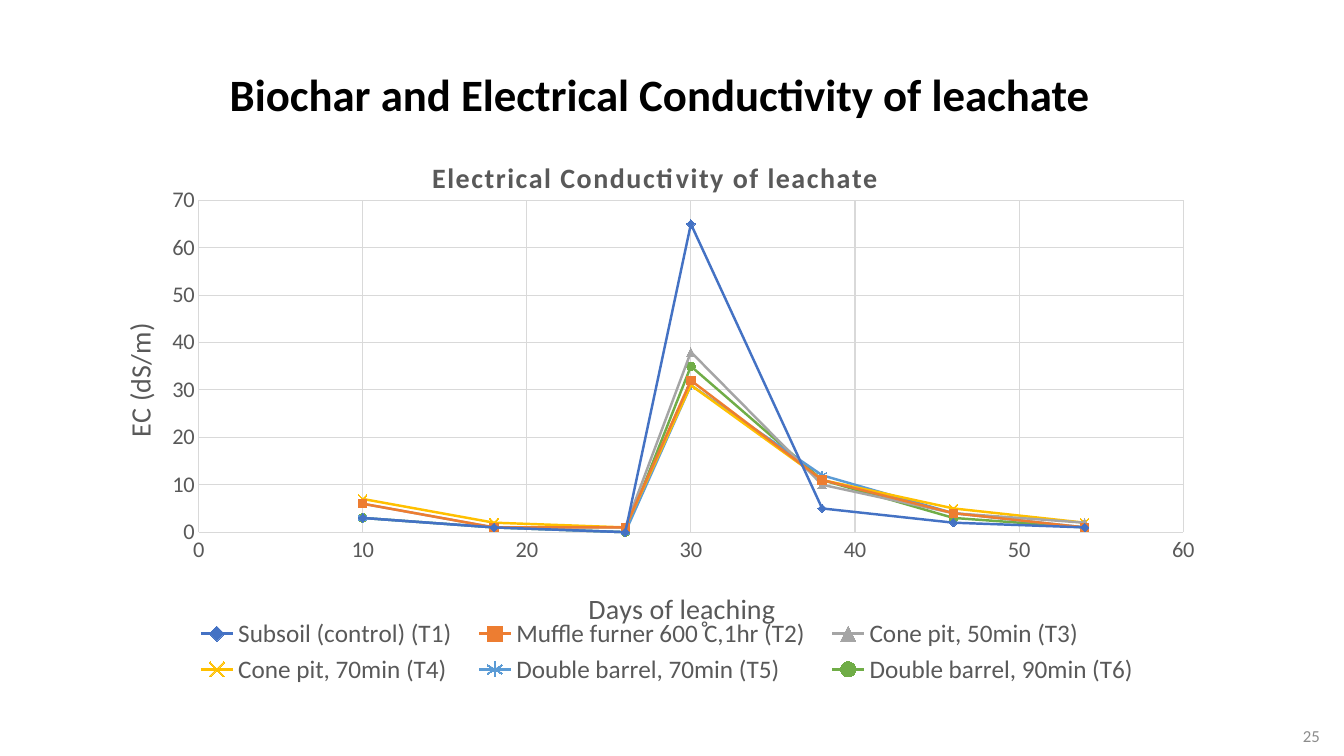
from dataclasses import dataclass

from lxml import etree
from pptx import Presentation
from pptx.chart.data import XyChartData
from pptx.dml.color import RGBColor
from pptx.enum.chart import XL_CHART_TYPE, XL_LEGEND_POSITION, XL_MARKER_STYLE, XL_TICK_MARK
from pptx.enum.text import MSO_ANCHOR, PP_ALIGN
from pptx.oxml.ns import qn
from pptx.util import Inches, Pt

LINES = XL_CHART_TYPE.XY_SCATTER_LINES
TOP = XL_LEGEND_POSITION.TOP
MARK = XL_MARKER_STYLE
NO_TICK = XL_TICK_MARK.NONE
MIDDLE = MSO_ANCHOR.MIDDLE
LEFT, RIGHT = PP_ALIGN.LEFT, PP_ALIGN.RIGHT
FACE = "Calibri"
COLORS = {
    "black": "000000", "page": "8C8C8C", "text": "595959", "grid": "D9D9D9",
    "blue": "4472C4", "orange": "ED7D31", "gray": "A5A5A5",
    "gold": "FFC000", "sky": "5B9BD5", "green": "70AD47",
}
DAYS = (10, 18, 26, 30, 38, 46, 54)


@dataclass
class Series:
    name: str
    vals: tuple
    color: str
    mark: int
    solid: bool = True


@dataclass
class Label:
    text: str
    box: tuple
    size: int
    color: str
    align: int
    bold: bool = False
    space: float = 1.0
    foot: float = 0.05


SERIES = [
    Series("Subsoil (control) (T1)", (3, 1, 0, 65, 5, 2, 1), "blue", MARK.DIAMOND),
    Series("Muffle furner 600 ̊C,1hr (T2)", (6, 1, 1, 32, 11, 4, 1), "orange", MARK.SQUARE),
    Series("Cone pit, 50min (T3)", (6, 1, 1, 38, 10, 4, 2), "gray", MARK.TRIANGLE),
    Series("Cone pit, 70min (T4)", (7, 2, 1, 31, 11, 5, 2), "gold", MARK.X, False),
    Series("Double barrel, 70min (T5)", (3, 1, 0, 31, 12, 4, 1), "sky", MARK.STAR, False),
    Series("Double barrel, 90min (T6)", (3, 1, 0, 35, 11, 3, 1), "green", MARK.CIRCLE),
]
LABELS = [
    Label("Biochar and Electrical Conductivity of leachate", (2.18, 0.4, 10.24, 1.27),
          32, "black", LEFT, True, 1.15, 0.34),
    Label("25", (10.19, 7.1, 3, 0.4), 12, "page", RIGHT),
]


def rgb(name: str) -> RGBColor:
    return RGBColor.from_string(COLORS[name])


def style(font, size: int, color: str, bold: bool = False) -> None:
    font.name = FACE
    font.size = Pt(size)
    font.bold = bold
    font.color.rgb = rgb(color)


def stroke(line, color: str, width: float) -> None:
    line.color.rgb = rgb(color)
    line.width = Pt(width)


def add_label(slide, label: Label) -> None:
    frame = slide.shapes.add_textbox(*map(Inches, label.box)).text_frame
    frame.word_wrap = True
    frame.vertical_anchor = MIDDLE
    frame.margin_bottom = Inches(label.foot)
    para = frame.paragraphs[0]
    para.alignment = label.align
    para.line_spacing = label.space
    run = para.add_run()
    run.text = label.text
    style(run.font, label.size, label.color, label.bold)


def add_title(title, text: str, bold: bool = False, turn: int = 0) -> None:
    frame = title.text_frame
    run = frame.paragraphs[0].add_run()
    run.text = text
    style(run.font, 20, "text", bold)
    if bold:
        run.font._element.set("spc", "100")
    body = title.element.find(".//" + qn("a:bodyPr"))
    body.set("rot", str(turn * 60000))
    body.set("vert", "horz")


def place(node, index: int, spot: dict, inner: bool = False) -> None:
    for old in node.findall(qn("c:layout")):
        node.remove(old)
    layout = etree.Element(qn("c:layout"))
    manual = etree.SubElement(layout, qn("c:manualLayout"))
    if inner:
        etree.SubElement(manual, qn("c:layoutTarget")).set("val", "inner")
    for key in "xy":
        etree.SubElement(manual, qn(f"c:{key}Mode")).set("val", "edge")
    for key, val in spot.items():
        etree.SubElement(manual, qn(f"c:{key}")).set("val", str(val))
    node.insert(index, layout)


def set_axis(axis, text: str, peak: int, turn: int) -> None:
    axis.minimum_scale, axis.maximum_scale, axis.major_unit = 0, peak, 10
    axis.major_tick_mark = axis.minor_tick_mark = NO_TICK
    axis.has_major_gridlines = True
    stroke(axis.major_gridlines.format.line, "grid", 0.75)
    stroke(axis.format.line, "grid", 0.75)
    style(axis.tick_labels.font, 16, "text")
    axis.tick_labels.number_format = "General"
    axis.tick_labels.number_format_is_linked = False
    add_title(axis.axis_title, text, turn=turn)


def add_graph(slide) -> None:
    data = XyChartData()
    for item in SERIES:
        points = data.add_series(item.name)
        for day, val in zip(DAYS, item.vals):
            points.add_data_point(day, val)
    box = map(Inches, (1.03, 1.22, 11.06, 5.86))
    chart = slide.shapes.add_chart(LINES, *box, data).chart
    style(chart.font, 10, "black")
    chart.has_title = True
    add_title(chart.chart_title, "Electrical Conductivity of leachate", True)
    set_axis(chart.category_axis, "Days of leaching", 60, 0)
    set_axis(chart.value_axis, "EC (dS/m)", 70, -90)
    chart.has_legend = True
    chart.legend.position = TOP
    chart.legend.include_in_layout = False
    style(chart.legend.font, 18, "text")
    chart.plots[0].vary_by_categories = False
    for item, line in zip(SERIES, chart.plots[0].series):
        line.smooth = False
        stroke(line.format.line, item.color, 1.75)
        mark = line.marker
        mark.style, mark.size = item.mark, 6
        stroke(mark.format.line, item.color, 0.75)
        if item.solid:
            mark.format.fill.solid()
            mark.format.fill.fore_color.rgb = rgb(item.color)
        else:
            mark.format.fill.background()
    root = chart.element
    place(chart.chart_title.element, 1, {"x": 0.29, "y": 0.05})
    place(chart.category_axis.axis_title.element, 1, {"x": 0.43, "y": 0.78})
    place(chart.value_axis.axis_title.element, 1, {"x": 0.01, "y": 0.33})
    place(root.find(".//" + qn("c:plotArea")), 0,
          {"x": 0.085, "y": 0.131, "w": 0.883, "h": 0.562}, True)
    place(root.find(".//" + qn("c:legend")), 1,
          {"x": 0.07, "y": 0.83, "w": 0.87, "h": 0.13})


def main() -> None:
    deck = Presentation()
    deck.slide_width, deck.slide_height = Inches(13.33), Inches(7.5)
    slide = deck.slides.add_slide(deck.slide_layouts[6])
    for label in LABELS:
        add_label(slide, label)
    add_graph(slide)
    deck.save("out.pptx")


if __name__ == "__main__":
    main()
